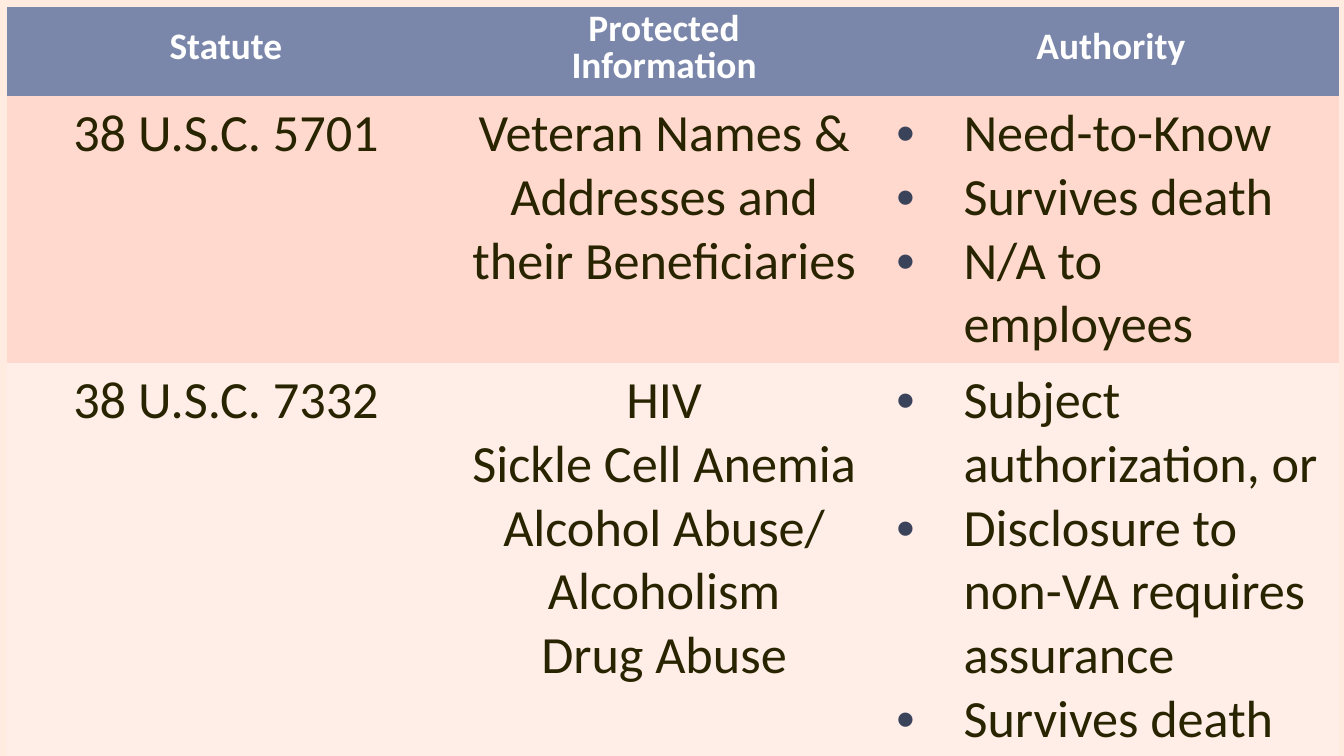
from lxml.etree import SubElement
from pptx import Presentation
from pptx.dml.color import RGBColor
from pptx.enum.text import MSO_ANCHOR as Anchor, PP_ALIGN as Align
from pptx.oxml.ns import qn
from pptx.util import Cm, Pt

# Content: each cell is a list of paragraphs
HEADER = [["Statute"], ["Protected", "Information"], ["Authority"]]
STATUTES = [
    [["38 U.S.C. 5701"],
     ["Veteran Names & Addresses and their Beneficiaries"],
     ["Need-to-Know", "Survives death", "N/A to employees"]],
    [["38 U.S.C. 7332"],
     ["HIV", "Sickle Cell Anemia", "Alcohol Abuse/ Alcoholism", "Drug Abuse"],
     ["Subject authorization, or",
      "Disclosure to non-VA requires assurance",
      "Survives death"]],
]
COL_WIDTHS = [8.28, 8.28, 8.61]
ROW_HEIGHTS = [1.68, 4.65, 6.88]
AUTHORITY_COL = 2

FONT = "Calibri"
BACKGROUND = RGBColor(0xFF, 0xEB, 0xE0)
WHITE = RGBColor(0xFF, 0xFF, 0xFF)
INK = RGBColor(0x29, 0x24, 0x00)
BULLET = RGBColor(0x3B, 0x43, 0x5B)
ROW_FILLS = [RGBColor(0x7B, 0x87, 0xAA), RGBColor(0xFF, 0xD9, 0xCE),
             RGBColor(0xFF, 0xED, 0xE8)]
PLAIN_STYLE = "{2D5ABB26-0587-4C30-8999-92F81FD0307C}"


def add_bullet(p):
    pPr = p._p.get_or_add_pPr()
    pPr.set("marL", str(Cm(1.27)))
    pPr.set("indent", str(-Cm(1.27)))
    color = SubElement(pPr, qn("a:buClr"))
    SubElement(color, qn("a:srgbClr"), val=str(BULLET))
    SubElement(pPr, qn("a:buFont"), typeface="Arial")
    SubElement(pPr, qn("a:buChar"), char="•")


def fill_cell(cell, lines, fill, is_header, bulleted):
    cell.fill.solid()
    cell.fill.fore_color.rgb = fill
    cell.margin_left = cell.margin_right = Cm(0.25)
    cell.margin_top = cell.margin_bottom = Cm(0.11)
    cell.vertical_anchor = Anchor.MIDDLE if is_header else Anchor.TOP
    tf = cell.text_frame
    for i, line in enumerate(lines):
        p = tf.add_paragraph() if i else tf.paragraphs[0]
        p.alignment = Align.LEFT if bulleted else Align.CENTER
        if is_header:
            p.line_spacing = Pt(20)
        if bulleted:
            add_bullet(p)
        r = p.add_run()
        r.text = line
        r.font.name = FONT
        r.font.size = Pt(20 if is_header else 28)
        r.font.bold = is_header
        r.font.color.rgb = WHITE if is_header else INK


# Slide
prs = Presentation()
prs.slide_width, prs.slide_height = Cm(25.4), Cm(14.29)
slide = prs.slides.add_slide(prs.slide_layouts[6])
slide.background.fill.solid()
slide.background.fill.fore_color.rgb = BACKGROUND

# Table without style borders
rows = [HEADER] + STATUTES
frame = slide.shapes.add_table(len(rows), len(COL_WIDTHS), Cm(0.13), Cm(0.13),
                               Cm(sum(COL_WIDTHS)), Cm(sum(ROW_HEIGHTS)))
table = frame.table
table._tbl.tblPr.find(qn("a:tableStyleId")).text = PLAIN_STYLE
for column, width in zip(table.columns, COL_WIDTHS):
    column.width = Cm(width)
for row, height in zip(table.rows, ROW_HEIGHTS):
    row.height = Cm(height)

# Cells
for r_idx, row in enumerate(rows):
    for c_idx, lines in enumerate(row):
        is_header = r_idx == 0
        fill_cell(table.cell(r_idx, c_idx), lines, ROW_FILLS[r_idx], is_header,
                  bulleted=c_idx == AUTHORITY_COL and not is_header)

prs.save("out.pptx")
